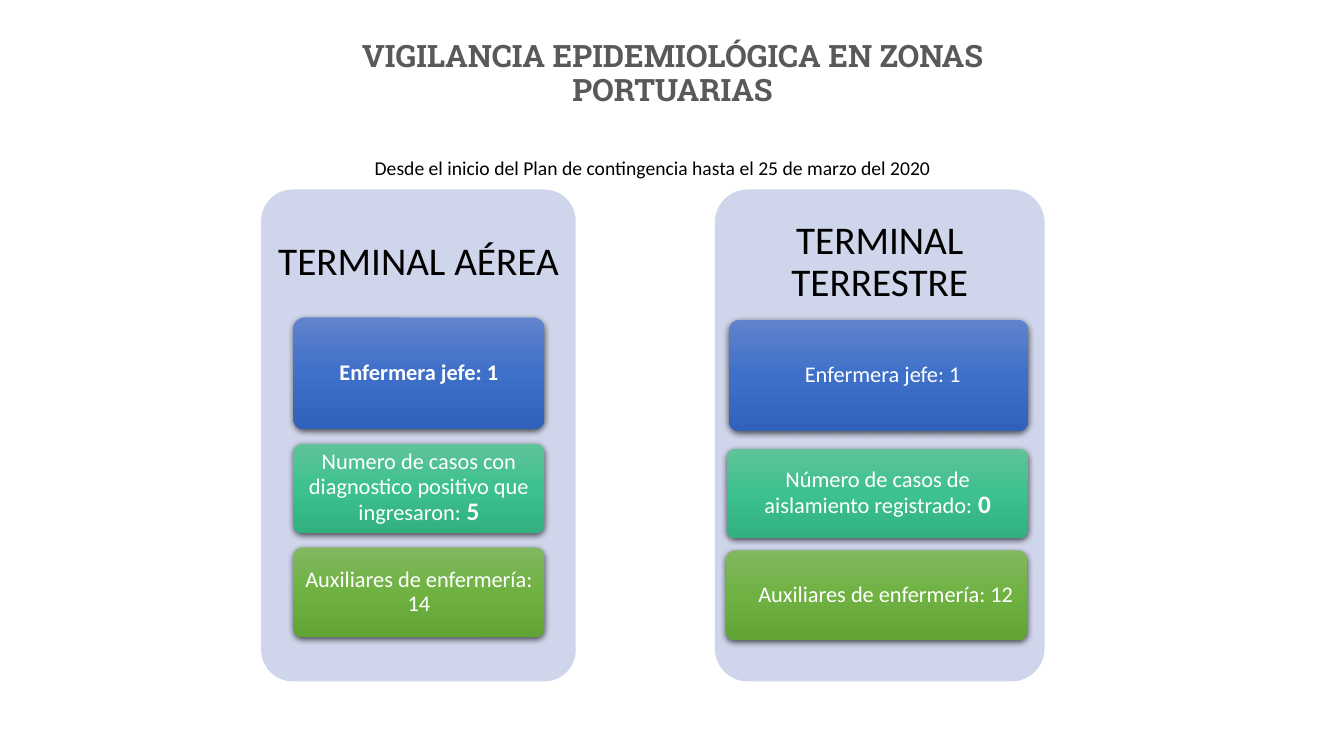
"""Builds the slide on epidemiological surveillance in port areas."""
import pptx
import pptx.dml.color
import pptx.enum.shapes
import pptx.enum.text
import pptx.oxml
import pptx.oxml.ns
import pptx.util
from pptx.util import Inches

COLORS = {
    "title": "595959", "black": "000000", "white": "FFFFFF", "panel": "CFD5EA",
    "blue": ("6183CB", "3E70CA", "3062BB"),
    "teal": ("60C39A", "3DC18E", "31B180"),
    "green": ("81B861", "6FB242", "62A336"),
}
NAMESPACE = pptx.oxml.ns.nsdecls("a")


def rgb(name):
    return pptx.dml.color.RGBColor.from_string(COLORS[name])


def write_text(shape, runs, color="white", font="Calibri", spacing=0.9, insets=(0.1, 0.05, 0.1, 0.05),
               anchor=pptx.enum.text.MSO_ANCHOR.MIDDLE):
    frame = shape.text_frame
    frame.word_wrap = True
    frame.auto_size = pptx.enum.text.MSO_AUTO_SIZE.NONE
    frame.vertical_anchor = anchor
    frame.margin_left, frame.margin_top, frame.margin_right, frame.margin_bottom = map(Inches, insets)
    paragraph = frame.paragraphs[0]
    paragraph.alignment = pptx.enum.text.PP_ALIGN.CENTER
    paragraph.line_spacing = spacing
    for text, size, bold in runs:
        run = paragraph.add_run()
        run.text = text
        run.font.name = font
        run.font.size = pptx.util.Pt(size)
        run.font.bold = bold
        run.font.color.rgb = rgb(color)


class TerminalSlide:
    def __init__(self, presentation):
        self.slide = presentation.slides.add_slide(presentation.slide_layouts[5])

    def title(self, text, left, top, width, height):
        shape = self.slide.shapes.title
        shape.left, shape.top, shape.width, shape.height = map(Inches, (left, top, width, height))
        write_text(shape, [(text, 22, True)], color="title", font="Roboto Slab")

    def caption(self, text, left, top, width, height):
        shape = self.slide.shapes.add_textbox(*map(Inches, (left, top, width, height)))
        write_text(shape, [(text, 14, False)], color="black", spacing=1.0,
                   anchor=pptx.enum.text.MSO_ANCHOR.TOP)

    def rounded(self, left, top, width, height):
        shape = self.slide.shapes.add_shape(pptx.enum.shapes.MSO_SHAPE.ROUNDED_RECTANGLE,
                                            *map(Inches, (left, top, width, height)))
        shape.adjustments[0] = 0.1
        shape.line.fill.background()
        shape.shadow.inherit = False
        return shape

    def panel(self, heading, left, width):
        shape = self.rounded(left, 1.88, width, 4.88)
        shape.fill.solid()
        shape.fill.fore_color.rgb = rgb("panel")
        write_text(shape, [(heading, 28, False)], color="black", insets=(0.03, 0.03, 0.03, 3.45))

    def card(self, runs, color, left, top, width, height, shift=0):
        shape = self.rounded(left, top, width, height)
        shape.fill.gradient()
        shape.fill.gradient_angle = 270
        properties = shape.element.spPr
        stops = properties.find(".//" + pptx.oxml.ns.qn("a:gsLst"))
        for stop in list(stops):
            stops.remove(stop)
        for index, value in enumerate(COLORS[color]):
            stops.append(pptx.oxml.parse_xml(
                f'<a:gs {NAMESPACE} pos="{index * 50000}"><a:srgbClr val="{value}"/></a:gs>'))
        properties.find(pptx.oxml.ns.qn("a:effectLst")).append(pptx.oxml.parse_xml(
            f'<a:outerShdw {NAMESPACE} blurRad="57150" dist="19050" dir="5400000" algn="ctr" rotWithShape="0">'
            f'<a:srgbClr val="{COLORS["black"]}"><a:alpha val="63000"/></a:srgbClr></a:outerShdw>'))
        write_text(shape, runs, insets=(0.04 + shift, 0.03, 0.04 - shift, 0.03))


def main():
    presentation = pptx.Presentation()
    presentation.slide_width, presentation.slide_height = Inches(13.33), Inches(7.5)
    page = TerminalSlide(presentation)
    page.title("VIGILANCIA EPIDEMIOLÓGICA EN ZONAS PORTUARIAS", 3.27, 0.12, 6.8, 1.24)

    page.panel("TERMINAL TERRESTRE", 7.09, 3.27)
    page.card([("Enfermera jefe: 1", 16, False)], "blue", 7.23, 3.17, 2.97, 1.11, shift=0.04)
    page.card([("Número de casos de aislamiento registrado:", 16, False), (" 0", 18, True)],
              "teal", 7.21, 4.45, 2.99, 0.89)
    page.card([("Auxiliares de enfermería: 12", 16, False)], "green", 7.2, 5.46, 2.99, 0.89, shift=0.09)

    page.panel("TERMINAL AÉREA", 2.59, 3.12)
    air_cards = [
        ([("Enfermera jefe: 1", 16, True)], "blue", 3.15, 1.11),
        ([("Numero de casos con diagnostico positivo que ingresaron:", 16, False), (" 5", 18, True)],
         "teal", 4.4, 0.89),
        ([("Auxiliares de enfermería: 14", 16, False)], "green", 5.43, 0.89),
    ]
    for runs, color, top, height in air_cards:
        page.card(runs, color, 2.91, top, 2.49, height)

    page.caption("Desde el inicio del Plan de contingencia hasta el 25 de marzo del 2020", 3.53, 1.5, 5.89, 0.34)
    presentation.save("out.pptx")


if __name__ == "__main__":
    main()
